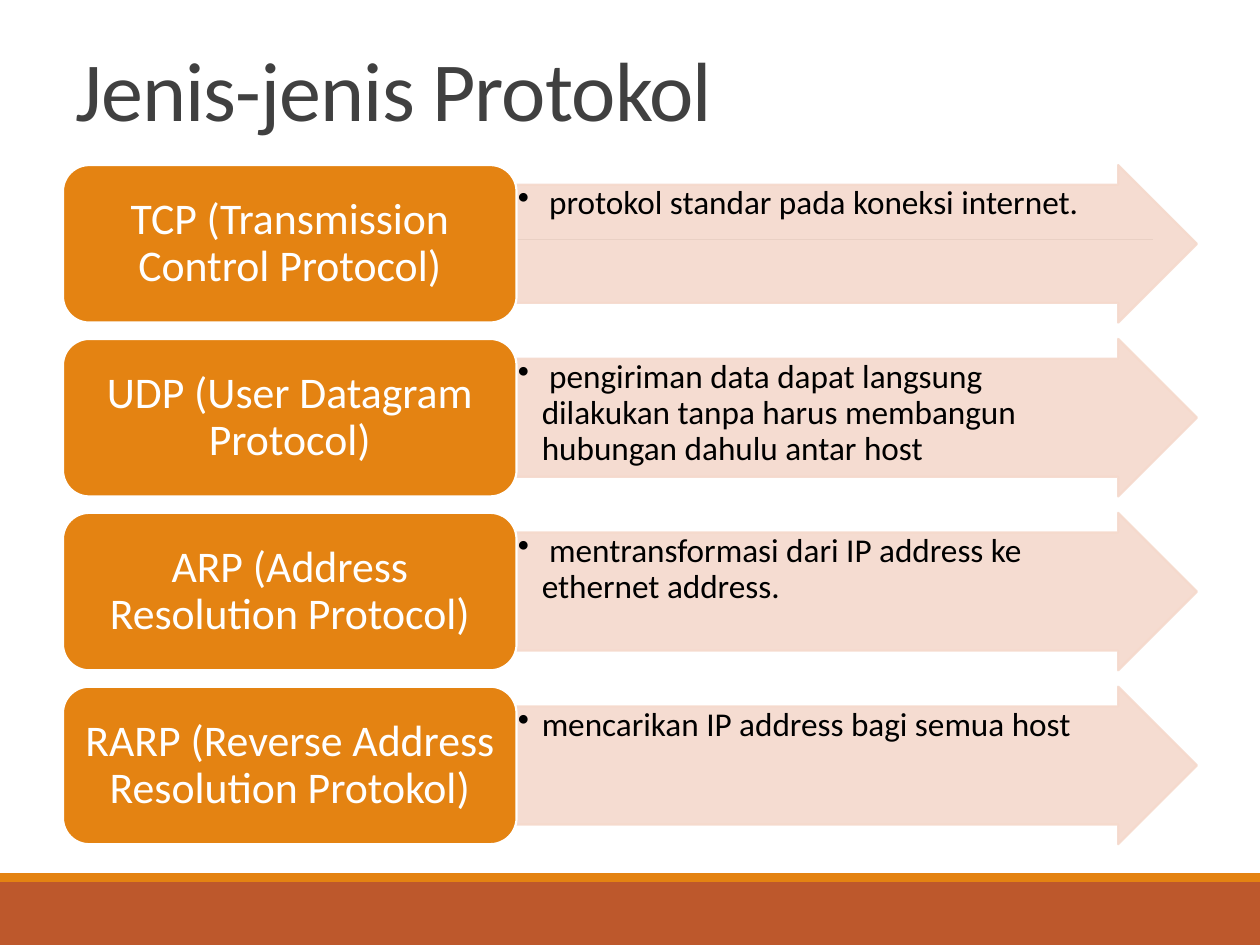
from dataclasses import dataclass

from lxml.etree import SubElement
from pptx import Presentation
from pptx.dml.color import RGBColor
from pptx.enum.shapes import MSO_CONNECTOR, MSO_SHAPE
from pptx.enum.text import MSO_ANCHOR, PP_ALIGN
from pptx.oxml.ns import qn
from pptx.shapes.autoshape import Shape
from pptx.slide import Slide
from pptx.util import Inches, Pt

ORANGE, RUST, PEACH, WHITE = "E48312", "BD582C", "F5D9CC", "FFFFFF"
FIRST_ROW_TOP, ROW_PITCH, ROW_HEIGHT = 1.31, 1.38, 1.25
LABEL_LEFT, LABEL_WIDTH, ARROW_WIDTH = 0.5, 3.6, 5.4


@dataclass
class Protocol:
    """A protocol's name and what it does."""

    name: str
    description: str


@dataclass
class Box:
    """A rectangular area in inches."""

    left: float
    top: float
    width: float
    height: float

    def lengths(self) -> list[Inches]:
        """Return the four lengths in the order python-pptx expects."""
        return [Inches(value) for value in (self.left, self.top, self.width, self.height)]


PROTOCOLS = [
    Protocol("TCP (Transmission Control Protocol)", " protokol standar pada koneksi internet."),
    Protocol(
        "UDP (User Datagram Protocol)",
        " pengiriman data dapat langsung dilakukan tanpa harus membangun hubungan dahulu antar host",
    ),
    Protocol("ARP (Address Resolution Protocol)", " mentransformasi dari IP address ke ethernet address."),
    Protocol("RARP (Reverse Address Resolution Protokol)", "mencarikan IP address bagi semua host"),
]


def color(value: str) -> RGBColor:
    """Convert a hex string to a colour."""
    return RGBColor.from_string(value)


def add_filled(slide: Slide, kind: MSO_SHAPE, box: Box, fill: str, line: str | None = None) -> Shape:
    """Add a flat preset shape with an optional outline."""
    shape = slide.shapes.add_shape(kind, *box.lengths())
    shape.shadow.inherit = False
    shape.fill.solid()
    shape.fill.fore_color.rgb = color(fill)
    if line is None:
        shape.line.fill.background()
    else:
        shape.line.color.rgb = color(line)
        shape.line.width = Pt(1.25)
    return shape


def write(shape: Shape, text: str, size: float, text_color: str, align: PP_ALIGN,
          anchor: MSO_ANCHOR, spacing: float) -> None:
    """Set the shape's text and its formatting."""
    frame = shape.text_frame
    frame.word_wrap = True
    frame.vertical_anchor = anchor
    frame.text = text
    paragraph = frame.paragraphs[0]
    paragraph.alignment = align
    paragraph.line_spacing = spacing
    font = paragraph.runs[0].font
    font.name, font.size = "Calibri", Pt(size)
    font.color.rgb = color(text_color)


def add_bullet(shape: Shape, indent: float) -> None:
    """Give the shape's first paragraph a hanging bullet."""
    properties = shape.text_frame.paragraphs[0]._p.get_or_add_pPr()
    properties.set("marL", str(Inches(indent)))
    properties.set("indent", str(-Inches(indent)))
    SubElement(properties, qn("a:buChar")).set("char", "•")


def add_title(slide: Slide, text: str) -> None:
    """Add the slide title with slightly tightened letters."""
    title = slide.shapes.add_textbox(*Box(0.5, 0.3, 9, 0.85).lengths())
    write(title, text, 48, "404040", PP_ALIGN.LEFT, MSO_ANCHOR.BOTTOM, 0.85)
    title.text_frame.paragraphs[0].runs[0].font._element.set("spc", "-50")


def add_rule(slide: Slide) -> None:
    """Add the thin grey rule behind the first row."""
    rule = slide.shapes.add_connector(
        MSO_CONNECTOR.STRAIGHT, Inches(0.98), Inches(1.9), Inches(9.15), Inches(1.9))
    rule.line.color.rgb = color("808080")
    rule.line.width = Pt(0.5)
    SubElement(rule._element.spPr, qn("a:effectLst"))


def add_arrow(slide: Slide, box: Box, text: str) -> None:
    """Add a translucent arrow holding a bulleted description."""
    arrow = add_filled(slide, MSO_SHAPE.RIGHT_ARROW, box, PEACH, PEACH)
    arrow.adjustments[0], arrow.adjustments[1] = 0.75, 0.5
    for tone in arrow._element.spPr.iter(qn("a:srgbClr")):
        SubElement(tone, qn("a:alpha")).set("val", "90000")
    write(arrow, text, 19, "000000", PP_ALIGN.LEFT, MSO_ANCHOR.TOP, 0.9)
    add_bullet(arrow, 0.19)
    frame = arrow.text_frame
    frame.margin_left = frame.margin_top = frame.margin_bottom = Inches(0.01)
    frame.margin_right = Inches(0.32)


def add_protocol(slide: Slide, row: int, protocol: Protocol) -> None:
    """Add one row: the description arrow and the name label."""
    top = FIRST_ROW_TOP + row * ROW_PITCH
    add_arrow(slide, Box(LABEL_LEFT + LABEL_WIDTH, top, ARROW_WIDTH, ROW_HEIGHT), protocol.description)
    label = add_filled(slide, MSO_SHAPE.ROUNDED_RECTANGLE,
                       Box(LABEL_LEFT, top, LABEL_WIDTH, ROW_HEIGHT), ORANGE, WHITE)
    write(label, protocol.name, 25, WHITE, PP_ALIGN.CENTER, MSO_ANCHOR.MIDDLE, 0.9)


def main() -> None:
    """Build the slide and save it."""
    presentation = Presentation()
    presentation.slide_width, presentation.slide_height = Inches(10), Inches(7.5)
    slide = presentation.slides.add_slide(presentation.slide_layouts[6])
    add_filled(slide, MSO_SHAPE.RECTANGLE, Box(0, 7, 10, 0.5), RUST)
    add_filled(slide, MSO_SHAPE.RECTANGLE, Box(0, 6.93, 10, 0.07), ORANGE)
    add_rule(slide)
    add_title(slide, "Jenis-jenis Protokol")
    for row, protocol in enumerate(PROTOCOLS):
        add_protocol(slide, row, protocol)
    presentation.save("out.pptx")


if __name__ == "__main__":
    main()
